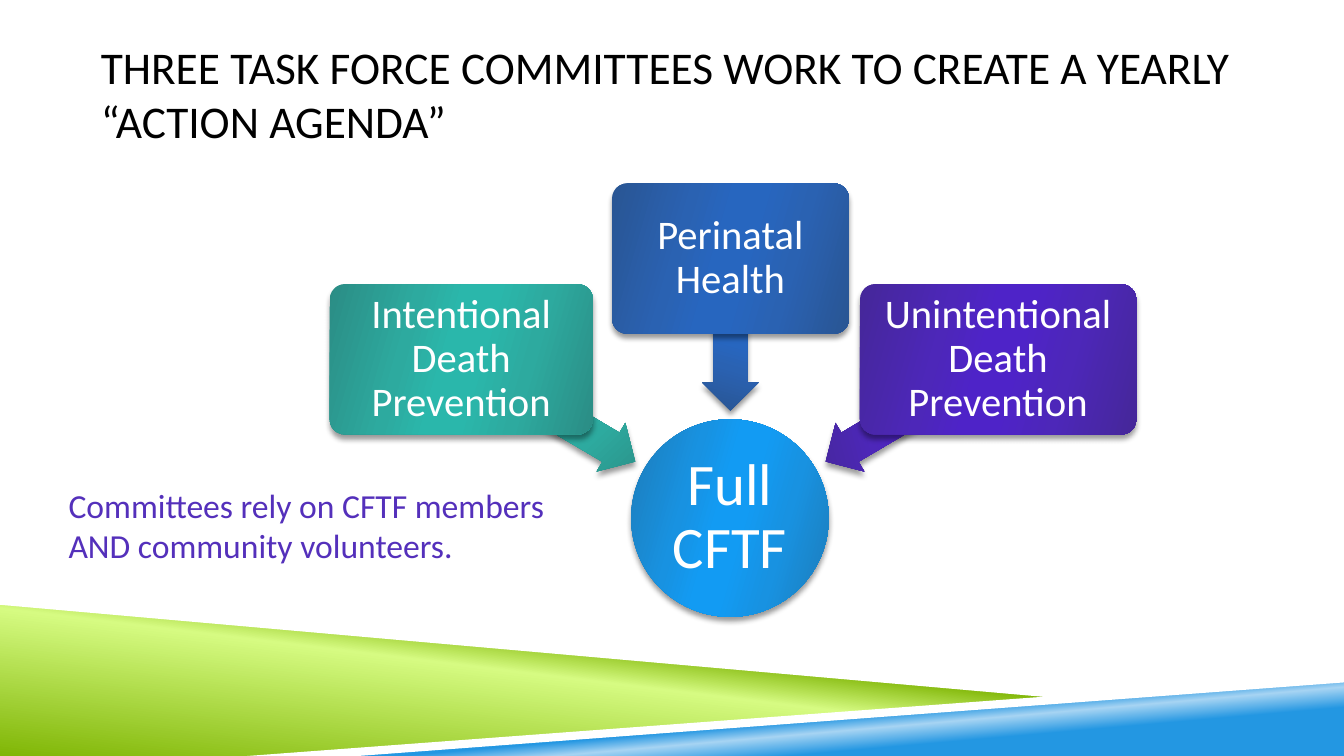
"""Build a slide on three committees that feed one task force."""
from lxml import etree
from pptx import Presentation
from pptx.dml.color import RGBColor
from pptx.enum.shapes import MSO_SHAPE
from pptx.enum.text import MSO_ANCHOR, MSO_AUTO_SIZE, PP_ALIGN
from pptx.oxml.ns import qn
from pptx.util import Inches, Pt

ROUND, OVAL, ARROW = MSO_SHAPE.ROUNDED_RECTANGLE, MSO_SHAPE.OVAL, MSO_SHAPE.LEFT_ARROW
MIDDLE, FIXED = MSO_ANCHOR.MIDDLE, MSO_AUTO_SIZE.NONE
LEFT, CENTER = PP_ALIGN.LEFT, PP_ALIGN.CENTER
FONT = "Calibri"
WHITE = "FFFFFF"
GLOSS = (0, 30, 45, 55, 73, 100)

LIME = [(0, "80B606"), (52, "D6FB82"), (66, "80B606")]
SKY = [(28, "2397E2"), (40, "A7D5F3"), (48, "2397E2")]
BANDS = [
    ([(0, 5.97), (10.56, 6.92), (2.67, 7.5), (0, 7.5)], LIME, 277),
    ([(2.64, 7.5), (13.33, 6.72), (13.33, 7.5)], SKY, 265),
    ([(0, 5.92), (0, 6), (10.54, 6.93), (11.09, 6.9)], WHITE, 0),
    ([(13.33, 6.69), (2.45, 7.5), (3.55, 7.5), (13.33, 6.77)], WHITE, 0),
]
TEAMS = [
    ("Intentional Death Prevention", (3.27, 2.82, 2.61, 1.49),
     (4.44, 3.79, 2, 0.56), 210.6, ("2B8D85", "2DAA9F", "2AB7AB")),
    ("Perinatal Health", (6.07, 1.82, 2.35, 1.49),
     (6.49, 3.04, 1.51, 0.56), 270, ("295593", "2A62B2", "2766BF")),
    ("Unintentional Death Prevention", (8.53, 2.82, 2.74, 1.49),
     (8.05, 3.79, 2, 0.56), 329.4, ("452799", "4D27B9", "4E23C8")),
]


def paint(target, tone):
    """Give a fill or font colour format a solid hex colour."""
    target.rgb = RGBColor.from_string(tone)


def blend(shape, stops, angle):
    """Fill a shape with gradient stops at a clockwise angle."""
    shape.fill.gradient()
    shape.fill.gradient_angle = 360 - angle
    group = shape._element.spPr.find(qn("a:gradFill")).find(qn("a:gsLst"))
    for old in list(group):
        group.remove(old)
    for spot, tone in stops:
        stop = etree.SubElement(group, qn("a:gs"), pos=str(spot * 1000))
        etree.SubElement(stop, qn("a:srgbClr"), val=tone)


def shade(shape):
    """Add a soft shadow below a shape."""
    shape.shadow.inherit = False
    effects = shape._element.spPr.find(qn("a:effectLst"))
    drop = etree.SubElement(effects, qn("a:outerShdw"), blurRad=str(Pt(4)),
                            dist=str(Pt(3.3)), dir="5400000", rotWithShape="0")
    tone = etree.SubElement(drop, qn("a:srgbClr"), val="000000")
    etree.SubElement(tone, qn("a:alpha"), val="40000")


def write(frame, words, size, tone, align=LEFT):
    """Write one formatted run into a text frame."""
    frame.word_wrap = True
    para = frame.paragraphs[0]
    para.alignment = align
    run = para.add_run()
    run.text = words
    run.font.name = FONT
    run.font.size = Pt(size)
    paint(run.font.color, tone)
    return para


def inset(frame, side, end):
    """Set the side and end margins of a text frame."""
    frame.margin_left = frame.margin_right = Inches(side)
    frame.margin_top = frame.margin_bottom = Inches(end)


def band(slide, points, fill, angle):
    """Draw one outline of the backdrop."""
    spots = [(Inches(x), Inches(y)) for x, y in points]
    maker = slide.shapes.build_freeform(*spots[0])
    maker.add_line_segments(spots[1:])
    shape = maker.convert_to_shape()
    shape.shadow.inherit = False
    shape.line.fill.background()
    if fill == WHITE:
        shape.fill.solid()
        paint(shape.fill.fore_color, fill)
    else:
        blend(shape, fill, angle)


def gloss(slide, kind, box, tones):
    """Add a shadowed shape whose gradient runs from edge to core and back."""
    shape = slide.shapes.add_shape(kind, *map(Inches, box))
    shape.line.fill.background()
    blend(shape, zip(GLOSS, tones + tones[::-1]), 16)
    shade(shape)
    return shape


def label(shape, words, size, pad):
    """Write centred white words inside a shape."""
    frame = shape.text_frame
    inset(frame, pad, pad)
    frame.vertical_anchor = MIDDLE
    write(frame, words, size, WHITE, CENTER).line_spacing = 0.9


def team(slide, name, box, way, turn, tones):
    """Add a committee box on top of its arrow."""
    arrow = gloss(slide, ARROW, way, tones)
    arrow.adjustments[0], arrow.adjustments[1] = 0.6, 0.5
    arrow.rotation = turn
    card = gloss(slide, ROUND, box, tones)
    card.adjustments[0] = 0.1
    label(card, name, 29, 0.06)


def head(slide, words):
    """Place and format the slide title."""
    title = slide.shapes.title
    title.left, title.top, title.width, title.height = map(Inches, (1, 0.3, 11.33, 1.25))
    frame = title.text_frame
    frame.auto_size = FIXED
    frame.vertical_anchor = MIDDLE
    inset(frame, 0, 0.05)
    write(frame, words, 32.4, "000000")


def note(slide, words):
    """Add the remark at the lower left."""
    box = slide.shapes.add_textbox(*map(Inches, (0.46, 4.76, 5.16, 1.31)))
    frame = box.text_frame
    inset(frame, 0.1, 0.05)
    frame.margin_left = Inches(0.22)
    write(frame, words, 24, "5430BB")


def main():
    """Build and save the deck."""
    deck = Presentation()
    deck.slide_width, deck.slide_height = Inches(13.33), Inches(7.5)
    slide = deck.slides.add_slide(deck.slide_layouts[5])
    for item in BANDS:
        band(slide, *item)
    head(slide, "THREE TASK FORCE COMMITTEES WORK TO CREATE A YEARLY “ACTION AGENDA”")
    note(slide, "Committees rely on CFTF members AND community volunteers.")
    hub = gloss(slide, OVAL, (6.26, 4.16, 1.96, 1.96), ("1D7CB9", "1892E1", "129BF3"))
    label(hub, "Full CFTF", 42, 0.03)
    for item in TEAMS:
        team(slide, *item)
    deck.save("out.pptx")


if __name__ == "__main__":
    main()
